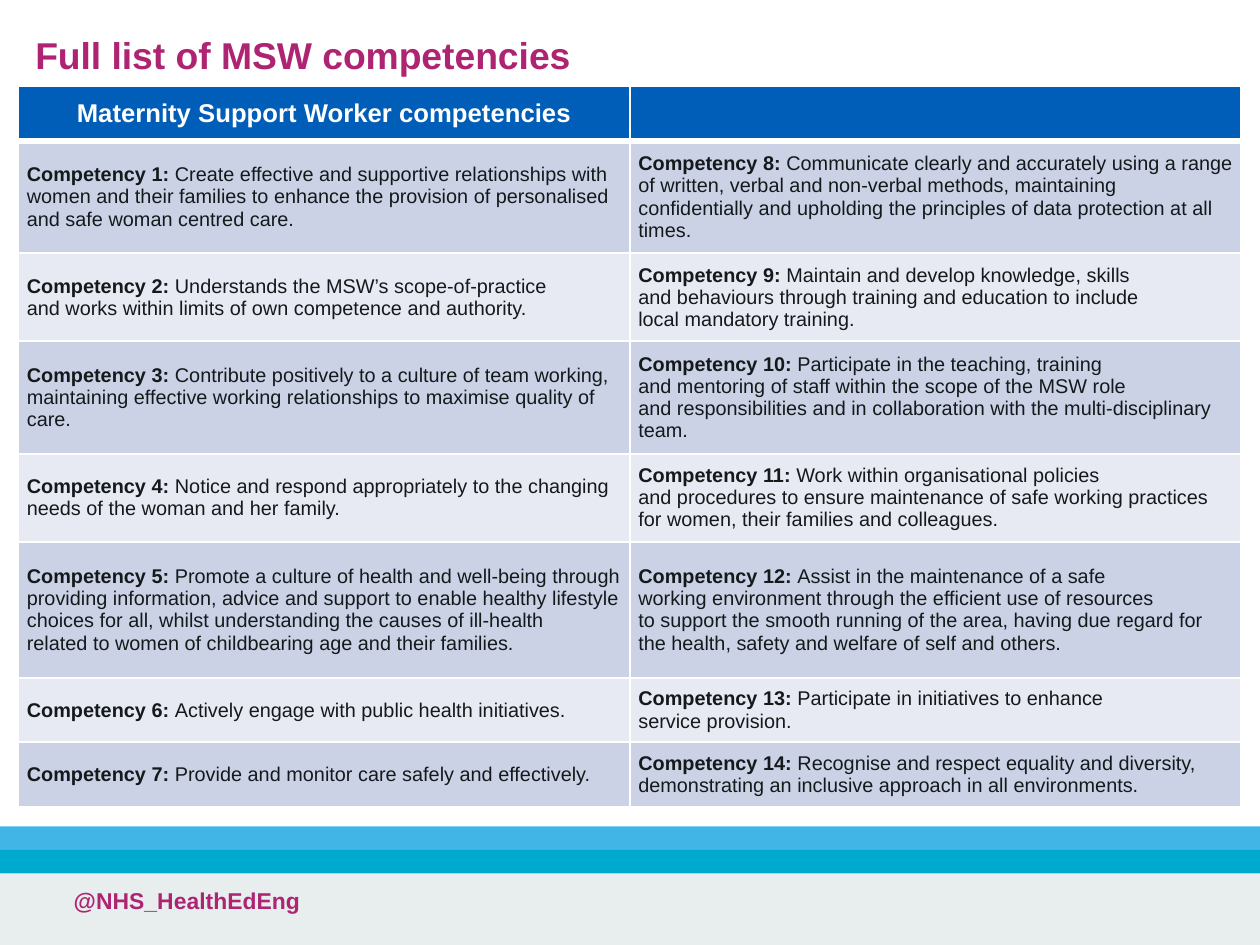
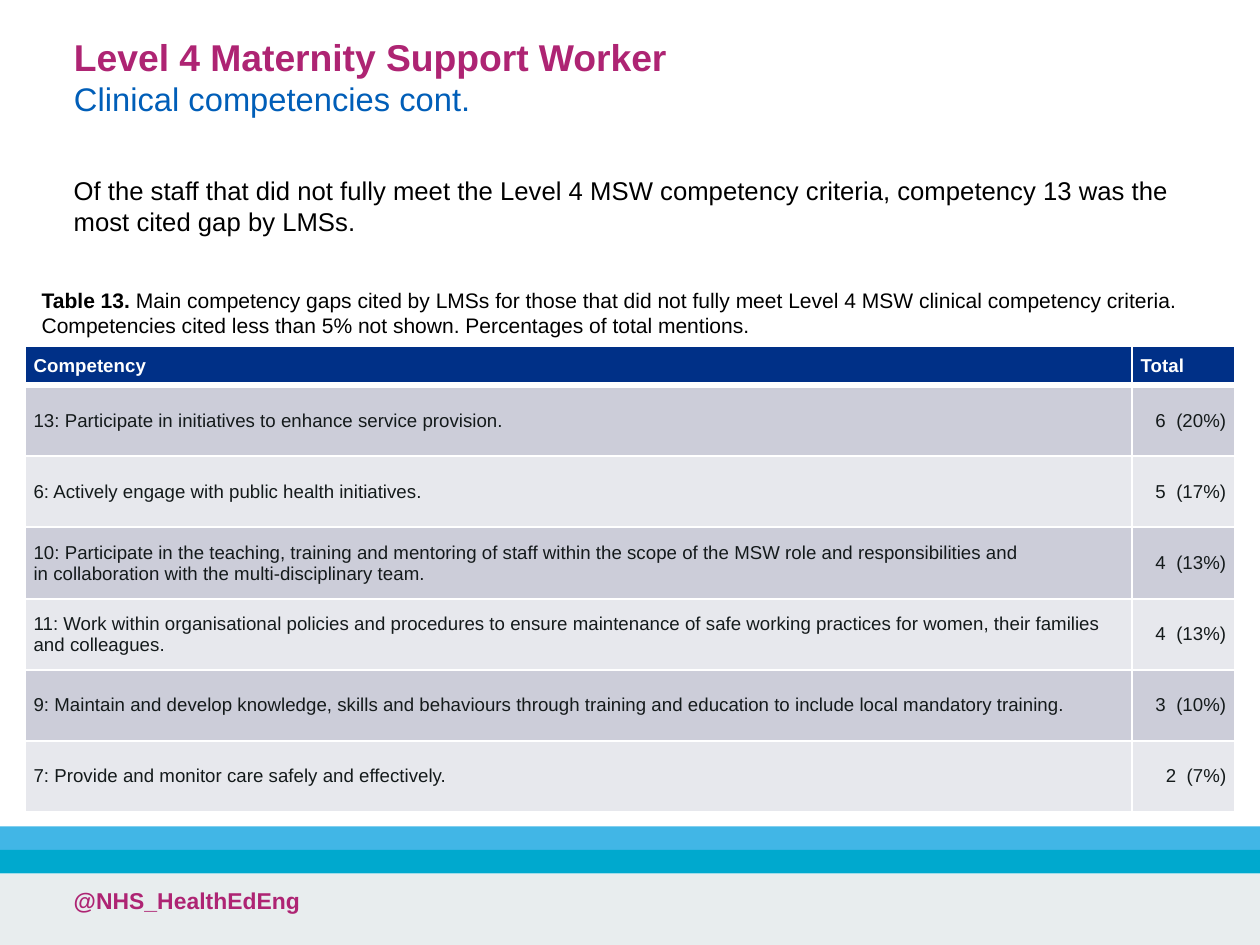
"""Build two slides on Maternity Support Worker competencies."""
from lxml.etree import SubElement
from pptx import Presentation
from pptx.dml.color import RGBColor
from pptx.enum.shapes import MSO_SHAPE
from pptx.enum.text import MSO_ANCHOR, MSO_AUTO_SIZE, PP_ALIGN
from pptx.oxml.ns import qn
from pptx.util import Inches, Pt

FONT = "Arial"
NBSP = chr(160)
PLUM = RGBColor(0xAE, 0x24, 0x73)
BLUE = RGBColor(0x00, 0x5E, 0xB8)
NAVY = RGBColor(0x00, 0x30, 0x87)
SKY = RGBColor(0x41, 0xB6, 0xE6)
AQUA = RGBColor(0x00, 0xA9, 0xCE)
PALE = RGBColor(0xE8, 0xED, 0xEE)
WHITE = RGBColor(0xFF, 0xFF, 0xFF)
BLACK = RGBColor(0x00, 0x00, 0x00)
INK = RGBColor(0x14, 0x1A, 0x1B)
BLUE_BANDS = RGBColor(0xCC, 0xD2, 0xE6), RGBColor(0xE7, 0xEA, 0xF3)
NAVY_BANDS = RGBColor(0xCC, 0xCD, 0xD9), RGBColor(0xE7, 0xE8, 0xED)


def write(p, size, color, *parts):
    """Add (text, bold) parts to a paragraph as runs, with ~ as a no-break space."""
    for text, bold in parts:
        r = p.add_run()
        r.text = text.replace("~", NBSP)
        r.font.name, r.font.size, r.font.bold = FONT, Pt(size), bold
        r.font.color.rgb = color
    if not parts:
        p._p.get_or_add_endParaRPr().set("sz", str(size * 100))


def add_grid(s, left, top, widths, heights, rows, sizes, head_fill, bands):
    """Add a banded table whose first row is the header."""
    table = s.shapes.add_table(len(rows), len(widths), Inches(left), Inches(top),
                               Inches(sum(widths)), Inches(sum(heights))).table
    for column, width in zip(table.columns, widths):
        column.width = Inches(width)
    for i, (row, height) in enumerate(zip(rows, heights)):
        table.rows[i].height = Inches(height)
        for j, parts in enumerate(row):
            cell = table.cell(i, j)
            cell.margin_left = cell.margin_right = Inches(0.05)
            cell.margin_top = cell.margin_bottom = Inches(0.05)
            cell.vertical_anchor = MSO_ANCHOR.MIDDLE
            for side in ("lnL", "lnR", "lnT", "lnB"):
                thick = (i, side) in ((0, "lnB"), (1, "lnT"))
                ln = SubElement(cell._tc.get_or_add_tcPr(), qn(f"a:{side}"), w=str(Pt(3 if thick else 1)))
                SubElement(SubElement(ln, qn("a:solidFill")), qn("a:srgbClr"), val=str(WHITE))
            cell.fill.solid()
            cell.fill.fore_color.rgb = bands[(i - 1) % 2] if i else head_fill
            write(cell.text_frame.paragraphs[0], sizes[min(i, 1)], INK if i else WHITE, *parts)
    return table


prs = Presentation()
prs.slide_width = Inches(7.5)
prs.slide_height = prs.slide_width * 3 // 4
slides = [prs.slides.add_slide(prs.slide_layouts[5]) for _ in range(2)]

master_tree = prs.slide_master.shapes._spTree
for top, height, color in ((5.2, 0.43, PALE), (4.92, 0.14, SKY), (5.06, 0.14, AQUA)):
    sp = slides[0].shapes.add_shape(MSO_SHAPE.RECTANGLE, 0, Inches(top), prs.slide_width, Inches(height))
    sp.shadow.inherit = False
    sp.fill.solid()
    sp.fill.fore_color.rgb = color
    sp.line.fill.background()
    master_tree.append(sp._element)
sp = slides[0].shapes.add_textbox(Inches(0.34), Inches(5.23), Inches(4.38), Inches(0.4))
sp.text_frame.word_wrap = True
write(sp.text_frame.paragraphs[0], 9.8, PLUM, ("@NHS_HealthEdEng", True))
master_tree.append(sp._element)

titles = (
    ((0.11, 0.14, 4.71, 0.37), "Full list of MSW competencies", None),
    ((0.34, 0.15, 6.81, 0.61), "Level 4 Maternity Support Worker", "Clinical competencies cont."),
)
for s, (box, heading, subheading) in zip(slides, titles):
    sp = s.shapes.title
    sp.left, sp.top, sp.width, sp.height = map(Inches, box)
    tf = sp.text_frame
    tf.auto_size = MSO_AUTO_SIZE.SHAPE_TO_FIT_TEXT
    write(tf.paragraphs[0], 16, PLUM, (heading, True))
    if subheading:
        write(tf.add_paragraph(), 14, BLUE, (subheading, False))
    for p in tf.paragraphs:
        p.alignment = PP_ALIGN.LEFT

competencies = [
    "Create effective~and supportive relationships~with women and their families~to enhance the provision of~personalised and safe woman~centred care.",
    "Understands the~MSW’s scope-of-practice and~works within limits of own~competence and authority.",
    "Contribute~positively to a culture of~team working, maintaining~effective working~relationships to maximise~quality of care.",
    "Notice and~respond appropriately to the~changing needs of the woman~and her family.",
    "Promote a~culture of health and~well-being through providing~information, advice and~support to enable healthy~lifestyle choices for all,~whilst understanding the~causes of ill-health related~to women of childbearing age~and their families.",
    "Actively engage~with public health~initiatives.",
    "Provide and~monitor care safely and~effectively.",
    "Communicate~clearly and accurately using a~range of written, verbal and~non-verbal methods,~maintaining confidentially and~upholding the principles of~data protection at all times.",
    "Maintain and~develop knowledge, skills and~behaviours through training and~education to include local~mandatory training.",
    "Participate in~the teaching, training and~mentoring of staff within the~scope of the MSW role and~responsibilities and in~collaboration with the~multi-disciplinary team.",
    "Work within~organisational policies and~procedures to ensure~maintenance of safe working~practices for women, their~families and colleagues.",
    "Assist in the~maintenance of a safe working~environment through the~efficient use of resources to~support the smooth running of~the area, having due regard~for the health, safety and~welfare of self and others.",
    "Participate in~initiatives to enhance service~provision.",
    "Recognise and~respect equality and~diversity, demonstrating an~inclusive approach in all~environments.",
]
cells = [[(f"Competency {n}: ", True), (text, False)] for n, text in enumerate(competencies, 1)]
rows = [([("Maternity Support Worker competencies", True)], []), *zip(cells[:7], cells[7:])]
table = add_grid(slides[0], 0.11, 0.51, (3.64, 3.64), (0.33, 0.66, 0.52, 0.66, 0.52, 0.81, 0.38, 0.38),
                 rows, (11, 8.5), BLUE, BLUE_BANDS)
table.cell(0, 0).text_frame.paragraphs[0].alignment = PP_ALIGN.CENTER

s = slides[1]
notes = (
    ((0.34, 0.99, 6.81, 0.47), 11, [
        ("Of the staff that did not fully meet the Level 4 MSW competency criteria, competency 13 was the most cited gap by LMSs.", False)]),
    ((0.15, 1.66, 7.2, 0.4), 9, [
        ("Table 13. ", True),
        ("Main competency gaps cited by LMSs for those that did not fully meet Level 4 MSW clinical competency criteria. Competencies cited less than 5% not shown. Percentages of total mentions.", False)]),
)
for box, size, parts in notes:
    tf = s.shapes.add_textbox(*map(Inches, box)).text_frame
    tf.word_wrap = True
    write(tf.paragraphs[0], size, BLACK, *parts)

gaps = ((13, "6  (20%)"), (6, "5  (17%)"), (10, "4  (13%)"), (11, "4  (13%)"), (9, "3  (10%)"), (7, "2  (7%)"))
rows = [([("Competency", True)], [("Total", True)])]
rows += [([(f"{n}: {competencies[n - 1]}", False)], [(total, False)]) for n, total in gaps]
table = add_grid(s, 0.15, 2.06, (6.59, 0.61), [0.22] + [2.54 / len(gaps)] * len(gaps), rows, (8, 8), NAVY, NAVY_BANDS)
for i in range(1, len(rows)):
    table.cell(i, 1).text_frame.paragraphs[0].alignment = PP_ALIGN.RIGHT

prs.save("out.pptx")
